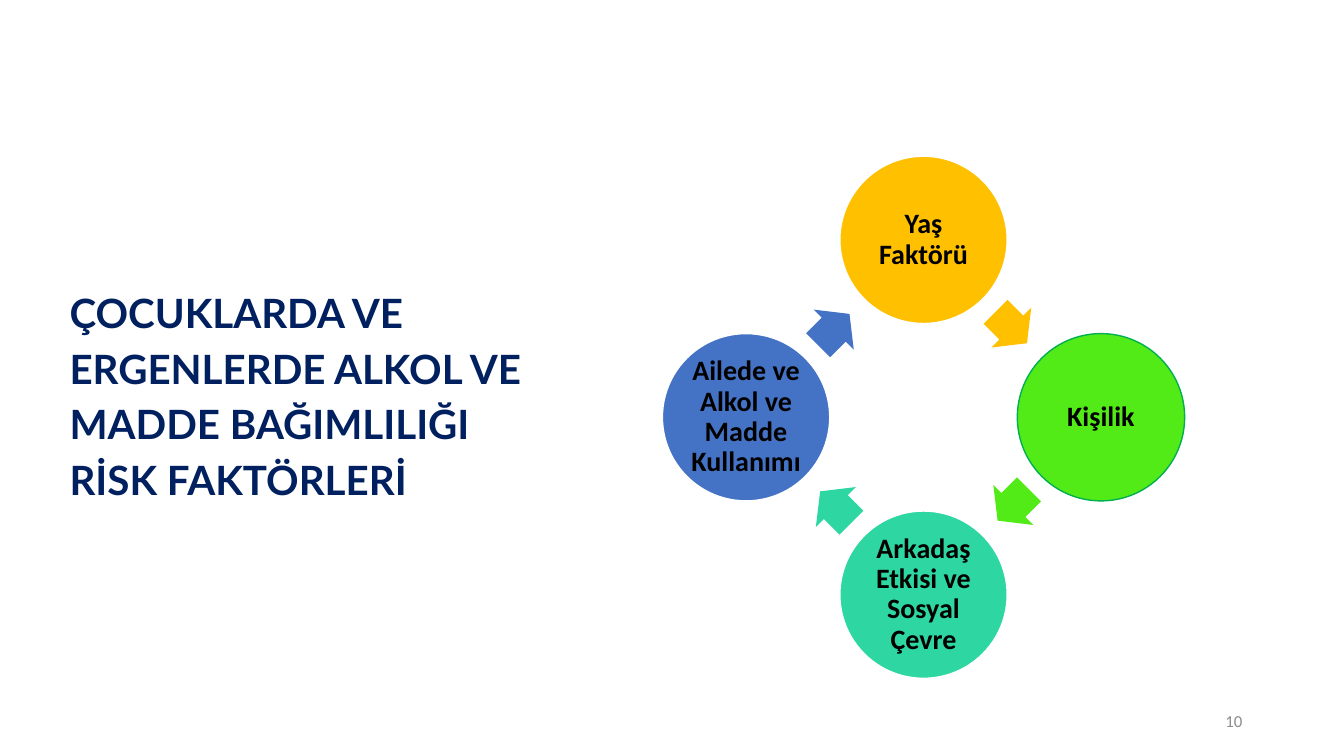
from math import cos, radians, sin

from lxml import etree
from pptx import Presentation
from pptx.dml.color import RGBColor
from pptx.enum.shapes import MSO_SHAPE
from pptx.enum.text import MSO_ANCHOR, PP_ALIGN
from pptx.util import Inches, Pt

NAVY = RGBColor(0x00, 0x20, 0x60)
BLACK = RGBColor(0x00, 0x00, 0x00)
WHITE = RGBColor(0xFF, 0xFF, 0xFF)
GRAY = RGBColor(0x8C, 0x8C, 0x8C)
AMBER = RGBColor(0xFF, 0xC0, 0x00)
LIME = RGBColor(0x53, 0xEB, 0x17)
GREEN = RGBColor(0x00, 0xB0, 0x50)
TEAL = RGBColor(0x2E, 0xD7, 0xA1)
BLUE = RGBColor(0x44, 0x72, 0xC4)

TITLE = "ÇOCUKLARDA VE ERGENLERDE ALKOL VE MADDE BAĞIMLILIĞI RİSK FAKTÖRLERİ"
PAGE_NUMBER = "10"
# Clockwise from the top: label, fill, outline
RISK_FACTORS = [
    ("Yaş Faktörü", AMBER, WHITE),
    ("Kişilik", LIME, GREEN),
    ("Arkadaş Etkisi ve Sosyal Çevre", TEAL, WHITE),
    ("Ailede ve Alkol ve Madde Kullanımı", BLUE, WHITE),
]

CENTER_X, CENTER_Y = 9.16, 4.14
CYCLE_RADIUS = 1.76
CIRCLE_SIZE = 1.66
ARROW_WIDTH, ARROW_HEIGHT = 0.44, 0.56
ARROW_SETBACK = 0.01


def write(shape, text, font_name, size, color, bold=False, alignment=PP_ALIGN.LEFT):
    frame = shape.text_frame
    frame.word_wrap = True
    frame.vertical_anchor = MSO_ANCHOR.MIDDLE
    paragraph = frame.paragraphs[0]
    paragraph.text = text
    paragraph.alignment = alignment
    font = paragraph.font
    font.name, font.size, font.bold = font_name, Pt(size), bold
    font.color.rgb = color
    return paragraph


def add_centered(slide, kind, x, y, width, height, fill):
    """Add a filled preset shape whose middle is at x, y."""
    shape = slide.shapes.add_shape(
        kind, Inches(x - width / 2), Inches(y - height / 2), Inches(width), Inches(height))
    shape.shadow.inherit = False
    shape.fill.solid()
    shape.fill.fore_color.rgb = fill
    return shape


def add_factor(slide, angle, label, fill, outline):
    x = CENTER_X + CYCLE_RADIUS * sin(radians(angle))
    y = CENTER_Y - CYCLE_RADIUS * cos(radians(angle))
    circle = add_centered(slide, MSO_SHAPE.OVAL, x, y, CIRCLE_SIZE, CIRCLE_SIZE, fill)
    circle.line.color.rgb = outline
    circle.line.width = Pt(1)
    frame = circle.text_frame
    frame.margin_left = frame.margin_right = Inches(0.03)
    frame.margin_top = frame.margin_bottom = Inches(0.03)
    paragraph = write(circle, label, "Calibri", 20, BLACK, True, PP_ALIGN.CENTER)
    paragraph.line_spacing = 0.9


def add_cycle_arrow(slide, angle, fill):
    """Add the arrow that leads clockwise past the given angle."""
    distance = CYCLE_RADIUS * cos(radians(45))
    across, up = sin(radians(angle)), cos(radians(angle))
    setback = ARROW_SETBACK * 2 ** 0.5
    x = CENTER_X + distance * across - setback * up
    y = CENTER_Y - distance * up - setback * across
    arrow = add_centered(slide, MSO_SHAPE.RIGHT_ARROW, x, y, ARROW_WIDTH, ARROW_HEIGHT, fill)
    arrow.line.fill.background()
    arrow.adjustments[0] = 0.6
    arrow.adjustments[1] = 0.5
    arrow.rotation = angle


def main():
    presentation = Presentation()
    presentation.slide_width, presentation.slide_height = Inches(13.33), Inches(7.5)
    slide = presentation.slides.add_slide(presentation.slide_layouts[6])

    title = slide.shapes.add_textbox(Inches(0.49), Inches(2.42), Inches(5.13), Inches(2.94))
    title.text_frame.margin_left = Inches(0.2)
    paragraph = write(title, TITLE, "Lato", 28.8, NAVY, True)
    paragraph.line_spacing = 1.15

    step = 360 / len(RISK_FACTORS)
    for index, (label, fill, outline) in enumerate(RISK_FACTORS):
        add_factor(slide, index * step, label, fill, outline)
        add_cycle_arrow(slide, (index + 0.5) * step, fill)

    number = slide.shapes.add_textbox(Inches(9.42), Inches(6.95), Inches(3), Inches(0.4))
    write(number, PAGE_NUMBER, "Calibri", 12, GRAY, alignment=PP_ALIGN.RIGHT)

    presentation.save("out.pptx")


if __name__ == "__main__":
    main()
